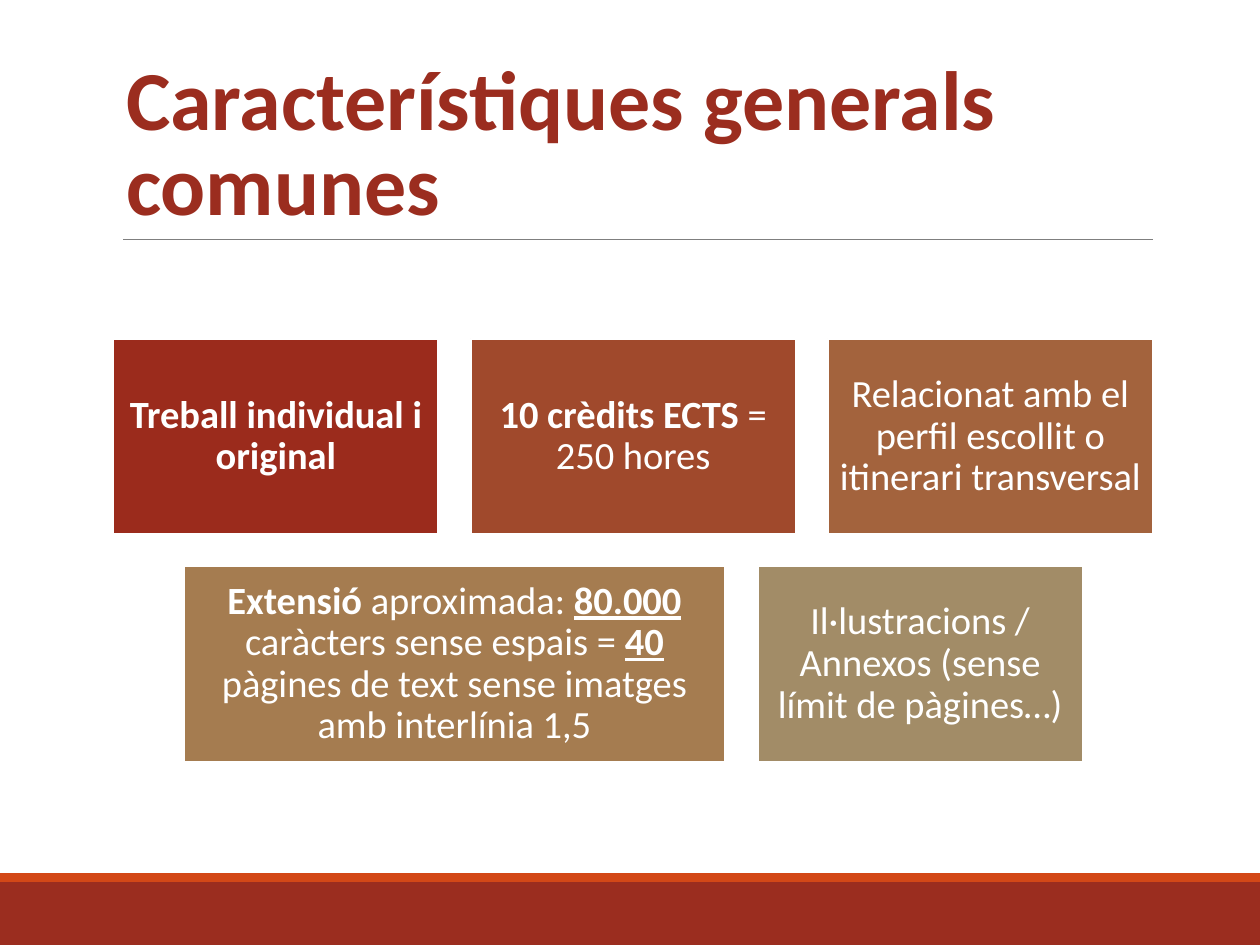
"""Build the slide on the general features shared by all final projects."""
from lxml.etree import SubElement
from pptx import Presentation
from pptx.dml.color import RGBColor
from pptx.enum.shapes import MSO_CONNECTOR, MSO_SHAPE
from pptx.enum.text import MSO_ANCHOR, MSO_AUTO_SIZE, PP_ALIGN
from pptx.oxml.ns import qn
from pptx.util import Inches, Pt

WHITE = RGBColor(0xFF, 0xFF, 0xFF)
GRAY = RGBColor(0x7F, 0x7F, 0x7F)
DARK_RED = RGBColor(0x9B, 0x2D, 0x1F)
ORANGE = RGBColor(0xD3, 0x48, 0x17)
BRICK = RGBColor(0x9B, 0x2B, 0x1C)
RUST = RGBColor(0xA0, 0x49, 0x2C)
COPPER = RGBColor(0xA3, 0x63, 0x3D)
TAN = RGBColor(0xA5, 0x7C, 0x50)
KHAKI = RGBColor(0xA2, 0x8C, 0x67)

FONT = "Calibri"
PLAIN, BOLD, UNDERLINED = (False, False), (True, False), (True, True)
LEFT, TOP, WIDTH = 0.9, 2.69, 8.25
CARD_W, WIDE_W, CARD_H = 2.58, 4.3, 1.55
GAP = (WIDTH - 3 * CARD_W) / 2

TITLE = "Característiques generals comunes"
BANDS = [(7, 0.5, DARK_RED), (6.93, 0.07, ORANGE)]
ROWS = [
    [
        (CARD_W, BRICK, [("Treball individual i original", BOLD)]),
        (CARD_W, RUST, [("10 crèdits ECTS", BOLD), (" = 250 hores", PLAIN)]),
        (CARD_W, COPPER, [("Relacionat amb el perfil escollit o itinerari transversal", PLAIN)]),
    ],
    [
        (WIDE_W, TAN, [
            ("Extensió", BOLD),
            (" aproximada: ", PLAIN),
            ("80.000", UNDERLINED),
            (" caràcters sense espais = ", PLAIN),
            ("40", UNDERLINED),
            (" pàgines de text sense imatges amb interlínia 1,5", PLAIN),
        ]),
        (CARD_W, KHAKI, [("Il·lustracions / Annexos (sense límit de pàgines…)", PLAIN)]),
    ],
]


def add_box(slide, left, top, width, height, color):
    box = slide.shapes.add_shape(
        MSO_SHAPE.RECTANGLE, Inches(left), Inches(top), Inches(width), Inches(height))
    box.shadow.inherit = False
    box.fill.solid()
    box.fill.fore_color.rgb = color
    box.line.fill.background()
    return box


def add_card(slide, left, top, width, color, phrases):
    card = add_box(slide, left, top, width, CARD_H, color)
    card.line.color.rgb = WHITE
    card.line.width = Pt(1.25)
    frame = card.text_frame
    frame.word_wrap = True
    frame.vertical_anchor = MSO_ANCHOR.MIDDLE
    frame.margin_left = frame.margin_right = Inches(0.09)
    frame.margin_top = frame.margin_bottom = Inches(0.09)
    paragraph = frame.paragraphs[0]
    paragraph.alignment = PP_ALIGN.CENTER
    paragraph.line_spacing = 0.9
    paragraph.font.name = FONT
    paragraph.font.size = Pt(22)
    paragraph.font.color.rgb = WHITE
    for text, (bold, underline) in phrases:
        run = paragraph.add_run()
        run.text = text
        run.font.bold = bold
        run.font.underline = underline


def add_title(slide):
    title = slide.shapes.title
    title.left, title.top = Inches(LEFT), Inches(0.31)
    title.width, title.height = Inches(WIDTH), Inches(1.59)
    frame = title.text_frame
    frame.text = TITLE
    frame.word_wrap = True
    frame.auto_size = MSO_AUTO_SIZE.NONE
    frame.vertical_anchor = MSO_ANCHOR.BOTTOM
    paragraph = frame.paragraphs[0]
    paragraph.alignment = PP_ALIGN.LEFT
    paragraph.line_spacing = 0.85
    paragraph.font.name = FONT
    paragraph.font.size = Pt(48)
    paragraph.font.bold = True
    paragraph.font.color.rgb = DARK_RED


def add_rule(slide):
    rule = slide.shapes.add_connector(
        MSO_CONNECTOR.STRAIGHT, Inches(0.98), Inches(1.9), Inches(LEFT + WIDTH), Inches(1.9))
    rule.line.color.rgb = GRAY
    rule.line.width = Pt(0.75)
    SubElement(rule._element.spPr, qn("a:effectLst"))


def main():
    deck = Presentation()
    deck.slide_width, deck.slide_height = Inches(10), Inches(7.5)
    slide = deck.slides.add_slide(deck.slide_layouts[5])
    for top, height, color in BANDS:
        add_box(slide, 0, top, 10, height, color)
    add_rule(slide)
    add_title(slide)
    for index, row in enumerate(ROWS):
        row_width = sum(width for width, _, _ in row) + GAP * (len(row) - 1)
        left = LEFT + (WIDTH - row_width) / 2
        for width, color, phrases in row:
            add_card(slide, left, TOP + index * (CARD_H + GAP), width, color, phrases)
            left += width + GAP
    deck.save("out.pptx")


if __name__ == "__main__":
    main()
